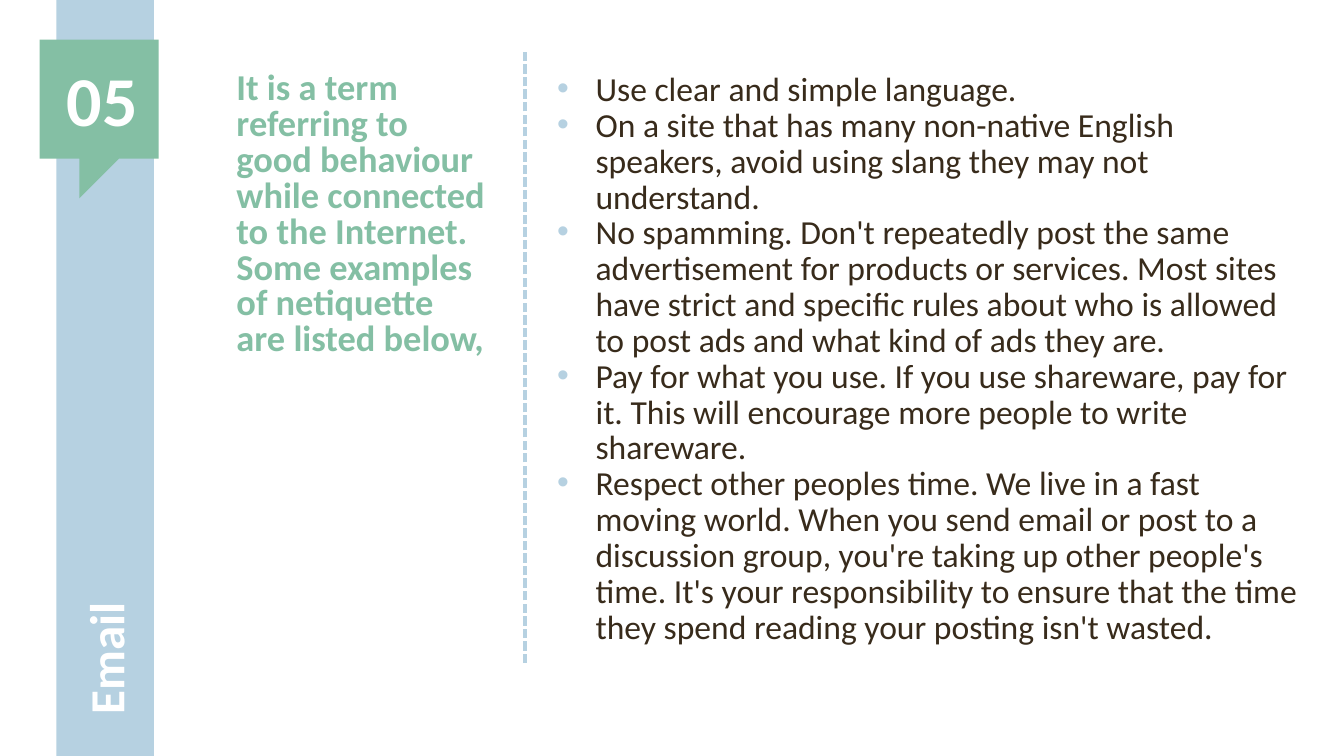
"""Build the netiquette slide with its side strip, lead text and list of rules."""
from dataclasses import dataclass

from pptx import Presentation
from pptx.dml.color import RGBColor
from pptx.enum.dml import MSO_LINE
from pptx.enum.shapes import MSO_CONNECTOR, MSO_SHAPE
from pptx.enum.text import MSO_ANCHOR, MSO_AUTO_SIZE, PP_ALIGN
from pptx.oxml.ns import qn
from pptx.util import Cm, Pt
from lxml.etree import SubElement

SECTION = "Email"
NUMBER = "05"
LEAD = ("It is a term referring to good behaviour while connected to the Internet. "
        "Some examples of netiquette are listed below,")
RULES = [
    "Use clear and simple language.",
    "On a site that has many non-native English speakers, avoid using slang "
    "they may not understand.",
    "No spamming. Don't repeatedly post the same advertisement for products or "
    "services. Most sites have strict and specific rules about who is allowed to "
    "post ads and what kind of ads they are.",
    "Pay for what you use. If you use shareware, pay for it. This will encourage "
    "more people to write shareware.",
    "Respect other peoples time. We live in a fast moving world. When you send "
    "email or post to a discussion group, you're taking up other people's time. "
    "It's your responsibility to ensure that the time they spend reading your "
    "posting isn't wasted.",
]
BADGE_START = (3.0, 0.69)
BADGE_CURVES = [
    ((2.49, 0.53), (1.96, 0.53), (1.55, 0.99)),
    ((1.17, 1.42), (0.79, 2.13), (0.71, 2.69)),
    ((0.53, 4.06), (1.73, 4.65), (2.95, 4.47)),
    ((4.14, 4.27), (4.75, 2.72), (4.37, 1.6)),
    ((4.27, 1.27), (3.96, 1.12), (3.66, 0.97)),
    ((3.45, 0.86), (3.23, 0.76), BADGE_START),
]


@dataclass(frozen=True)
class Theme:
    """Colours, font and type sizes of the slide."""
    blue: RGBColor = RGBColor(0xB6, 0xD1, 0xE1)
    green: RGBColor = RGBColor(0x84, 0xBF, 0xA4)
    white: RGBColor = RGBColor(0xFF, 0xFF, 0xFF)
    brown: RGBColor = RGBColor(0x38, 0x2B, 0x1B)
    font: str = "Calibri"
    section: float = 35
    number: float = 50
    lead: float = 26
    rule: float = 24
    leading: float = 25.6


THEME = Theme()


def curve_points(start, curves, steps=16):
    """Return points in centimetres along joined cubic curves."""
    points = []
    for first, second, end in curves:
        for step in range(1, steps + 1):
            t = step / steps
            weights = ((1 - t) ** 3, 3 * t * (1 - t) ** 2, 3 * t * t * (1 - t), t ** 3)
            corners = (start, first, second, end)
            points.append(tuple(sum(w * corner[axis] for w, corner in zip(weights, corners))
                                for axis in (0, 1)))
        start = end
    return points


def paint(shape, colour):
    """Give a shape a flat fill without line or shadow."""
    shape.shadow.inherit = False
    shape.fill.solid()
    shape.fill.fore_color.rgb = colour
    shape.line.fill.background()


def write(box, lines, size, colour, spacing, bold=True, align=PP_ALIGN.LEFT,
          anchor=MSO_ANCHOR.TOP, indent=(0, 0), bullet=None):
    """Fill a text box with evenly formatted paragraphs."""
    frame = box.text_frame
    frame.word_wrap = True
    frame.auto_size = MSO_AUTO_SIZE.NONE
    frame.vertical_anchor = anchor
    frame.text = "\n".join(lines)
    for paragraph in frame.paragraphs:
        paragraph.alignment = align
        paragraph.line_spacing = spacing
        paragraph.space_before = Pt(0)
        margin, first_line = indent
        properties = paragraph._p.get_or_add_pPr()
        properties.set("marL", str(Cm(margin)))
        properties.set("indent", str(Cm(first_line)))
        if bullet is not None:
            tint = SubElement(properties, qn("a:buClr"))
            SubElement(tint, qn("a:srgbClr")).set("val", str(bullet))
            SubElement(properties, qn("a:buFont")).set("typeface", "Arial")
            SubElement(properties, qn("a:buChar")).set("char", "•")
        for run in paragraph.runs:
            run.font.name = THEME.font
            run.font.size = Pt(size)
            run.font.bold = bold
            run.font.color.rgb = colour


def place(left, top, width, height):
    """Turn a box in centimetres into lengths."""
    return tuple(Cm(length) for length in (left, top, width, height))


def main():
    """Compose and save the slide."""
    deck = Presentation()
    deck.slide_width, deck.slide_height = Cm(33.87), Cm(19.05)
    slide = deck.slides.add_slide(deck.slide_layouts[5])
    shapes = slide.shapes

    strip = shapes.add_shape(MSO_SHAPE.RECTANGLE, *place(1.42, 0, 2.46, 19.05))
    paint(strip, THEME.blue)

    outline = shapes.build_freeform(*BADGE_START, scale=Cm(1))
    outline.add_line_segments(curve_points(BADGE_START, BADGE_CURVES), close=True)
    paint(outline.convert_to_shape(), THEME.green)

    section = shapes.title
    section.left, section.top, section.width, section.height = place(-8, 6.68, 21.34, 1.8)
    section.rotation = 270
    strip._element.addnext(section._element)
    write(section, [SECTION], THEME.section, THEME.white, Pt(40.2), anchor=MSO_ANCHOR.MIDDLE)

    number = shapes.add_textbox(*place(0.43, 1.55, 4.29, 2.39))
    write(number, [NUMBER], THEME.number, THEME.white, 0.9, align=PP_ALIGN.CENTER)

    lead = shapes.add_textbox(*place(5.66, 1.7, 6.91, 8.61))
    write(lead, [LEAD], THEME.lead, THEME.green, Pt(THEME.leading), indent=(0.05, 0))

    rules = shapes.add_textbox(*place(13.77, 1.7, 19.43, 14))
    write(rules, RULES, THEME.rule, THEME.brown, Pt(THEME.leading), bold=False,
          indent=(0.99, -0.97), bullet=THEME.blue)

    divider = shapes.add_connector(MSO_CONNECTOR.STRAIGHT, *place(13.23, 16.71, 13.23, 1.27))
    divider.line.color.rgb = THEME.blue
    divider.line.width = Pt(2.25)
    divider.line.dash_style = MSO_LINE.SQUARE_DOT
    SubElement(divider._element.spPr, qn("a:effectLst"))

    deck.save("out.pptx")


if __name__ == "__main__":
    main()
